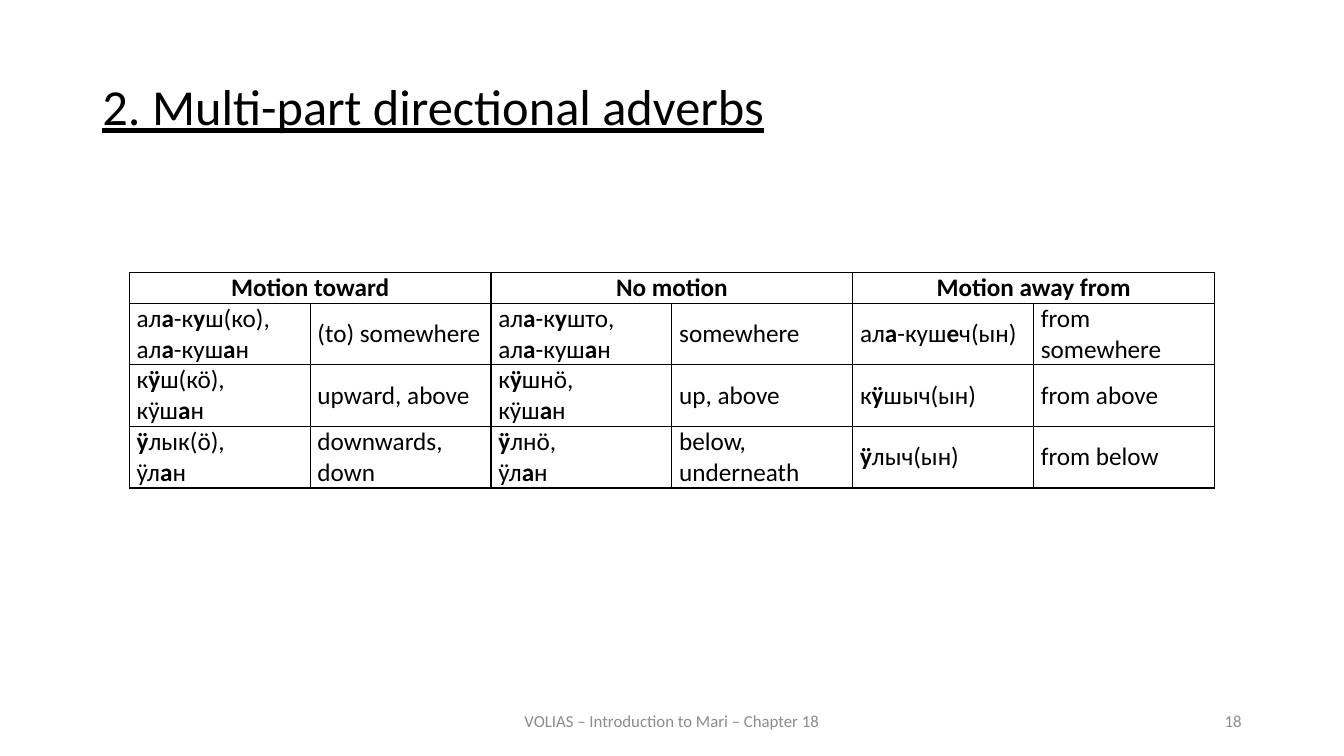
from dataclasses import dataclass

from lxml.etree import SubElement
from pptx import Presentation
from pptx.dml.color import RGBColor
from pptx.enum.text import MSO_ANCHOR as Anchor, MSO_AUTO_SIZE as AutoSize, PP_ALIGN as Align
from pptx.oxml.ns import qn
from pptx.util import Pt


@dataclass(frozen=True)
class Theme:
    font: str = "Calibri"
    ink: str = "000000"
    muted: str = "8C8C8C"
    title: int = 36
    body: int = 18
    small: int = 12


THEME = Theme()

HEADINGS = ["Motion toward", "No motion", "Motion away from"]
ADVERBS = [
    ["ал*а*-к*у*ш(ко),\nал*а*-куш*а*н", "(to) somewhere",
     "ал*а*-к*у*што,\nал*а*-куш*а*н", "somewhere",
     "ал*а*-куш*е*ч(ын)", "from somewhere"],
    ["к*ӱ*ш(кӧ),\nкӱш*а*н", "upward, above",
     "к*ӱ*шнӧ,\nкӱш*а*н", "up, above",
     "к*ӱ*шыч(ын)", "from above"],
    ["*ӱ*лык(ӧ),\nӱл*а*н", "downwards, down",
     "*ӱ*лнӧ,\nӱл*а*н", "below, underneath",
     "*ӱ*лыч(ын)", "from below"],
]


def add_run(p, text, size, color=THEME.ink, bold=False, underline=False):
    r = p.add_run()
    r.text = text
    font = r.font
    font.name, font.size = THEME.font, Pt(size)
    font.bold, font.underline = bold, underline
    font.color.rgb = RGBColor.from_string(color)


def add_marked_runs(p, text):
    for i, part in enumerate(text.split("*")):
        if part:
            add_run(p, part, THEME.body, bold=i % 2 == 1)


def set_title(s, text):
    sp = s.shapes.title
    sp.left, sp.top, sp.width, sp.height = Pt(66), Pt(54.7), Pt(828), Pt(71.3)
    tf = sp.text_frame
    tf.auto_size = AutoSize.NONE
    tf.vertical_anchor = Anchor.TOP
    p = tf.paragraphs[0]
    p.alignment = Align.JUSTIFY
    p.line_spacing = 0.9
    p.space_before = Pt(12)
    add_run(p, text, THEME.title, underline=True)


def add_footer(s, text, left, width, align):
    sp = s.shapes.add_textbox(Pt(left), Pt(500.5), Pt(width), Pt(28.75))
    tf = sp.text_frame
    tf.word_wrap = True
    tf.vertical_anchor = Anchor.MIDDLE
    p = tf.paragraphs[0]
    p.alignment = align
    add_run(p, text, THEME.small, THEME.muted)


def add_borders(cell):
    tc_pr = cell._tc.get_or_add_tcPr()
    for side in ("lnL", "lnR", "lnT", "lnB"):
        ln = SubElement(tc_pr, qn(f"a:{side}"), w=str(Pt(1)))
        fill = SubElement(ln, qn("a:solidFill"))
        SubElement(fill, qn("a:srgbClr"), val=THEME.ink)


def style_cell(cell):
    cell.margin_left = cell.margin_right = Pt(5.2)
    cell.margin_top = cell.margin_bottom = Pt(0)
    add_borders(cell)
    cell.fill.background()


def fill_cell(cell, text, align=Align.LEFT, anchor=Anchor.MIDDLE):
    cell.vertical_anchor = anchor
    tf = cell.text_frame
    for i, line in enumerate(text.split("\n")):
        p = tf.add_paragraph() if i else tf.paragraphs[0]
        p.alignment = align
        add_marked_runs(p, line)


def add_adverb_table(s):
    rows, cols = len(ADVERBS) + 1, len(ADVERBS[0])
    line, col_width = 22, 129.2
    table = s.shapes.add_table(rows, cols, Pt(92.4), Pt(194.6), Pt(cols * col_width),
                               Pt(line * (2 * rows - 1))).table
    table.first_row = table.horz_banding = False
    for col in table.columns:
        col.width = Pt(col_width)
    for i, row in enumerate(table.rows):
        row.height = Pt(2 * line if i else line)
    for cell in table.iter_cells():
        style_cell(cell)
    for i, heading in enumerate(HEADINGS):
        cell = table.cell(0, 2 * i)
        cell.merge(table.cell(0, 2 * i + 1))
        fill_cell(cell, f"*{heading}*", Align.CENTER, Anchor.TOP)
    for i, texts in enumerate(ADVERBS, 1):
        for j, text in enumerate(texts):
            fill_cell(table.cell(i, j), text)


def main():
    prs = Presentation()
    prs.slide_width, prs.slide_height = Pt(960), Pt(540)
    s = prs.slides.add_slide(prs.slide_layouts[5])
    set_title(s, "2. Multi-part directional adverbs")
    add_adverb_table(s)
    add_footer(s, "VOLIAS – Introduction to Mari – Chapter 18", 318, 324, Align.CENTER)
    add_footer(s, "18", 678, 216, Align.RIGHT)
    prs.save("out.pptx")


if __name__ == "__main__":
    main()
